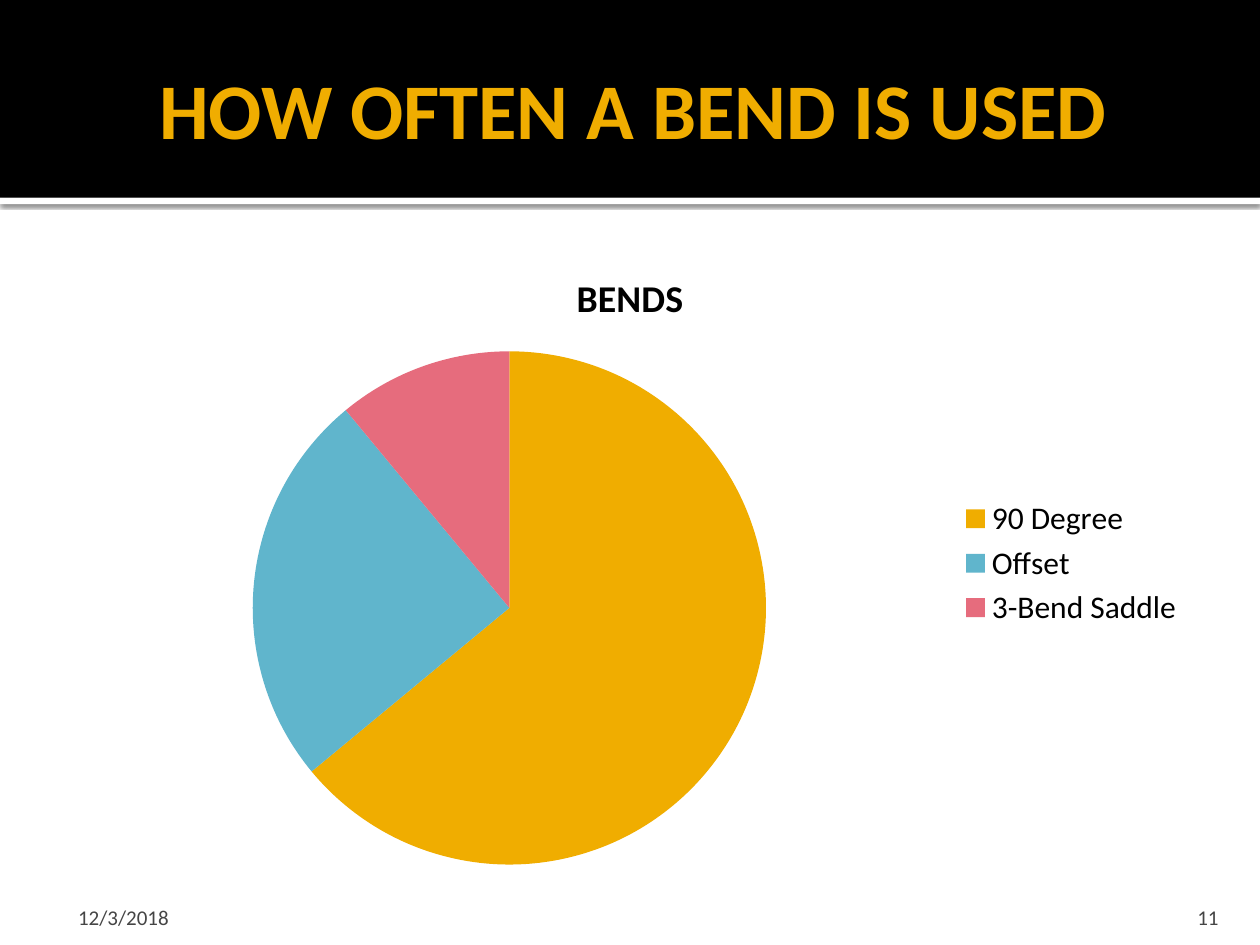
from lxml import etree
from pptx import Presentation
from pptx import util as u
from pptx.chart import data as chart_data
from pptx.dml.color import RGBColor
from pptx.enum import chart as chart_enum, shapes, text
from pptx.oxml import ns

WIDTH, HEIGHT = u.Inches(10), u.Inches(7.5)
FONT = "Calibri"
COLORS = {
    "band": "000000",
    "rule": "FFFFFF",
    "ink": "000000",
    "footer": "454545",
    "gold": "F0AD00",
    "blue": "60B5CC",
    "rose": "E66C7D",
}
# Category: (share, colour)
BENDS = {
    "90 Degree": (64, "gold"),
    "Offset": (25, "blue"),
    "3-Bend Saddle": (11, "rose"),
}


def color(key):
    return RGBColor.from_string(COLORS[key])


def box(left, top, width, height):
    """Turn inches on the 10 by 7.5 grid into lengths."""
    return tuple(u.Inches(n) for n in (left, top, width, height))


def set_font(font, size, key, bold=False):
    values = {"name": FONT, "size": u.Pt(size), "bold": bold}
    for attribute, value in values.items():
        setattr(font, attribute, value)
    font.color.rgb = color(key)


def add_bar(slide, area, key):
    bar = slide.shapes.add_shape(shapes.MSO_SHAPE.RECTANGLE, *area)
    bar.shadow.inherit = False
    bar.fill.solid()
    bar.fill.fore_color.rgb = color(key)
    bar.line.fill.background()
    return bar


def add_shadow(shape):
    effects = shape._element.spPr.find(ns.qn("a:effectLst"))
    shadow = etree.SubElement(
        effects, ns.qn("a:outerShdw"), blurRad=str(u.Pt(2.5)),
        dist=str(u.Pt(0.8)), dir="5400000", algn="tl", rotWithShape="0")
    tint = etree.SubElement(shadow, ns.qn("a:srgbClr"), val=COLORS["ink"])
    etree.SubElement(tint, ns.qn("a:alpha"), val="60000")


def add_label(slide, area, wording, size, key, align, anchor, insets, bold=False):
    frame = slide.shapes.add_textbox(*area).text_frame
    sides = ("margin_left", "margin_top", "margin_right", "margin_bottom")
    values = dict(zip(sides, map(u.Inches, insets)))
    values.update(word_wrap=True, vertical_anchor=anchor)
    for attribute, value in values.items():
        setattr(frame, attribute, value)
    paragraph = frame.paragraphs[0]
    paragraph.alignment = align
    run = paragraph.add_run()
    run.text = wording
    set_font(run.font, size, key, bold)


def add_header(slide, area):
    left, top, width, height = area
    # White rule under the black band
    rule = add_bar(slide, (left, top + height, width, u.Inches(0.05)), "rule")
    add_shadow(rule)
    add_bar(slide, area, "band")
    # Title
    margin = int(width * 0.05)
    title = (left + margin, top + u.Inches(0.17),
             width - 2 * margin, height - u.Inches(0.2))
    add_label(slide, title, "HOW OFTEN A BEND IS USED", 45, "gold",
              text.PP_ALIGN.CENTER, text.MSO_ANCHOR.MIDDLE,
              (0.1, 0.05, 0.05, 0.05), bold=True)


def add_bend_chart(slide, area):
    data = chart_data.CategoryChartData()
    data.categories = list(BENDS)
    data.add_series("BENDS", [share for share, _ in BENDS.values()])
    chart = slide.shapes.add_chart(
        chart_enum.XL_CHART_TYPE.PIE, *area, data).chart
    set_font(chart.font, 18, "ink")

    # Chart title
    chart.has_title = True
    title = chart.chart_title
    title.include_layout = False
    title.text_frame.text = "BENDS"
    set_font(title.text_frame.paragraphs[0].runs[0].font, 21.6, "ink", True)

    # Legend
    chart.has_legend = True
    chart.legend.position = chart_enum.XL_LEGEND_POSITION.RIGHT
    chart.legend.include_layout = False
    set_font(chart.legend.font, 18, "ink")

    # Slices
    pie = chart.plots[0]
    pie.vary_by_categories = True
    for index, (_, key) in enumerate(BENDS.values()):
        fill = pie.series[0].points[index].format.fill
        fill.solid()
        fill.fore_color.rgb = color(key)


def add_footer(slide, area):
    left, top, width, height = area
    date_width, number_width = u.Inches(2.33), u.Inches(0.8)
    add_label(slide, (left, top, date_width, height), "12/3/2018", 12, "footer",
              text.PP_ALIGN.LEFT, text.MSO_ANCHOR.BOTTOM, (0.12, 0.05, 0.05, 0))
    number_left = left + width - number_width
    add_label(slide, (number_left, top, number_width, height), "11", 12, "footer",
              text.PP_ALIGN.RIGHT, text.MSO_ANCHOR.BOTTOM, (0.1, 0.05, 0.1, 0))


def main():
    deck = Presentation()
    deck.slide_width, deck.slide_height = WIDTH, HEIGHT
    slide = deck.slides.add_slide(deck.slide_layouts[6])
    add_header(slide, box(0, 0, 10, 1.57))
    add_bend_chart(slide, box(0.5, 1.94, 9, 5.06))
    add_footer(slide, box(0.5, 7.08, 9.27, 0.3))
    deck.save("out.pptx")


if __name__ == "__main__":
    main()
